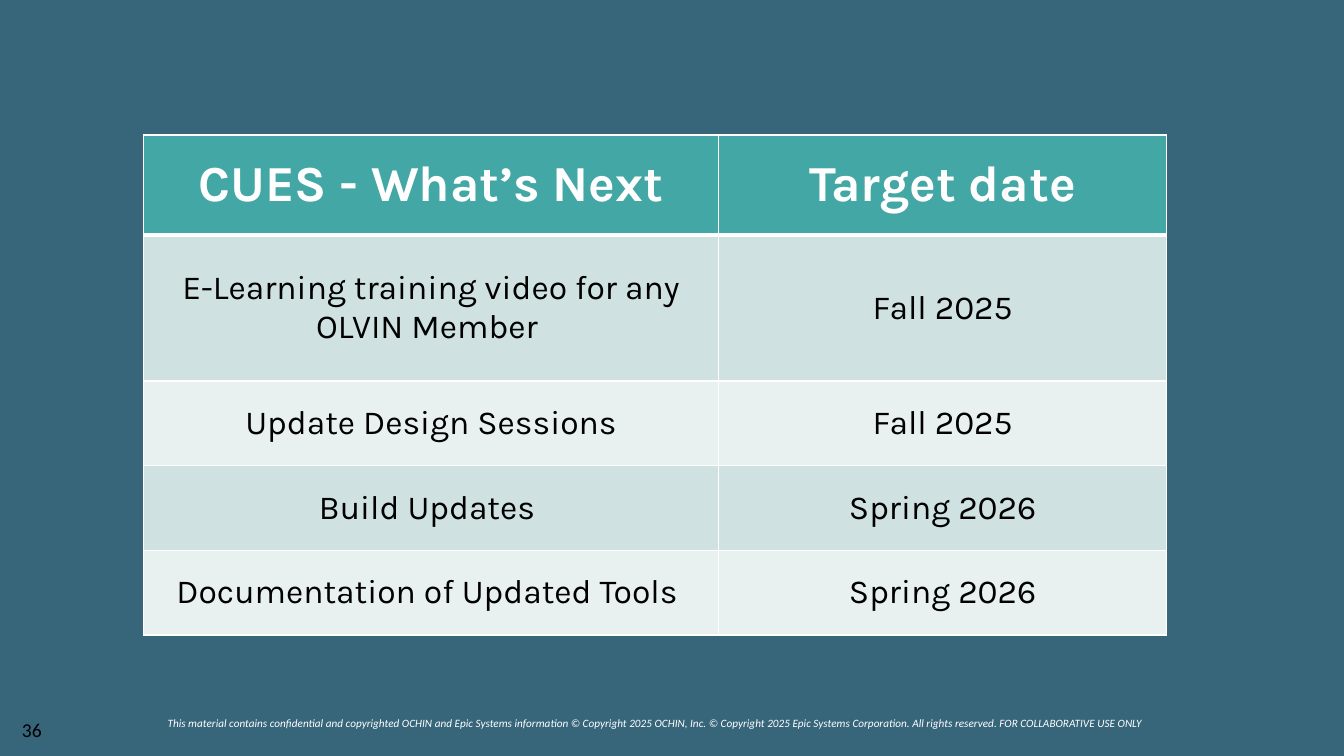
from dataclasses import dataclass

from lxml import etree
from pptx import Presentation
from pptx import util as u
from pptx.dml.color import RGBColor
from pptx.enum import text
from pptx.oxml import ns

EMU_PER_PX = 9144  # 100 px to the inch

BACKGROUND = "37657A"
WHITE = "FFFFFF"
BLACK = "000000"
HEADER_FILL = "42A7A5"
BAND_FILLS = ("CFE1E1", "E9F1F0")

COLUMN_WIDTHS = (571, 444)
THIN, THICK = 1, 3


@dataclass(frozen=True)
class Milestone:
    task: str
    target: str
    height: int


HEADER = Milestone("CUES - What’s Next", "Target date", 99)
MILESTONES = (
    Milestone("E-Learning training video for any OLVIN Member ", "Fall 2025", 145),
    Milestone("Update Design Sessions", "Fall 2025", 84),
    Milestone("Build Updates ", "Spring 2026", 84),
    Milestone("Documentation of Updated Tools ", "Spring 2026", 84),
)
FOOTER = (
    "This material contains confidential and copyrighted OCHIN and Epic Systems information "
    "© Copyright 2025 OCHIN, Inc. © Copyright 2025 Epic Systems Corporation. "
    "All rights reserved. FOR COLLABORATIVE USE ONLY"
)


def px(length: int) -> u.Emu:
    return u.Emu(length * EMU_PER_PX)


def color(value: str) -> RGBColor:
    return RGBColor.from_string(value)


def write(frame, words: str, *, size: int, font: str, fill: str, bold: bool = False,
          italic: bool = False, centered: bool = False, spacing: float = 1.0) -> None:
    """Put one formatted paragraph into a text frame."""
    frame.word_wrap = True
    para = frame.paragraphs[0]
    para.alignment = text.PP_ALIGN.CENTER if centered else text.PP_ALIGN.LEFT
    para.line_spacing = spacing
    span = para.add_run()
    span.text = words
    span.font.size = u.Pt(size)
    span.font.name = font
    span.font.bold = bold
    span.font.italic = italic
    span.font.color.rgb = color(fill)


def add_label(page, left: int, top: int, width: int, height: int, words: str, **style) -> None:
    box = page.shapes.add_textbox(px(left), px(top), px(width), px(height))
    write(box.text_frame, words, **style)


def set_borders(cell, top: int, bottom: int) -> None:
    """Draw white borders; top and bottom are widths in points."""
    properties = cell._tc.get_or_add_tcPr()
    for side, width in (("L", THIN), ("R", THIN), ("T", top), ("B", bottom)):
        line = etree.SubElement(properties, ns.qn(f"a:ln{side}"), w=str(u.Pt(width)))
        solid = etree.SubElement(line, ns.qn("a:solidFill"))
        etree.SubElement(solid, ns.qn("a:srgbClr"), val=WHITE)


def add_schedule(page, left: int, top: int) -> None:
    entries = (HEADER, *MILESTONES)
    table = page.shapes.add_table(
        len(entries), len(COLUMN_WIDTHS), px(left), px(top),
        px(sum(COLUMN_WIDTHS)), px(sum(entry.height for entry in entries)),
    ).table
    for column, width in zip(table.columns, COLUMN_WIDTHS):
        column.width = px(width)
    for index, entry in enumerate(entries):
        is_header = index == 0
        table.rows[index].height = px(entry.height)
        for cell, words in zip(table.rows[index].cells, (entry.task, entry.target)):
            set_borders(cell, top=THICK if index == 1 else THIN,
                        bottom=THICK if is_header else THIN)
            cell.fill.solid()
            cell.fill.fore_color.rgb = color(
                HEADER_FILL if is_header else BAND_FILLS[(index - 1) % 2])
            cell.vertical_anchor = text.MSO_ANCHOR.MIDDLE
            write(cell.text_frame, words, size=36 if is_header else 24, font="Karla",
                  fill=WHITE if is_header else BLACK, bold=is_header, centered=True)


def main() -> None:
    deck = Presentation()
    deck.slide_width, deck.slide_height = px(1333), px(750)
    page = deck.slides.add_slide(deck.slide_layouts[6])
    page.background.fill.solid()
    page.background.fill.fore_color.rgb = color(BACKGROUND)

    add_label(page, 12, 707, 56, 34, "36", size=14, font="Calibri", fill=BLACK)
    add_label(page, 91, 707, 1119, 31, FOOTER, size=8, font="Calibri", fill=WHITE,
              italic=True, centered=True, spacing=0.9)
    add_schedule(page, 142, 134)
    deck.save("out.pptx")


if __name__ == "__main__":
    main()
